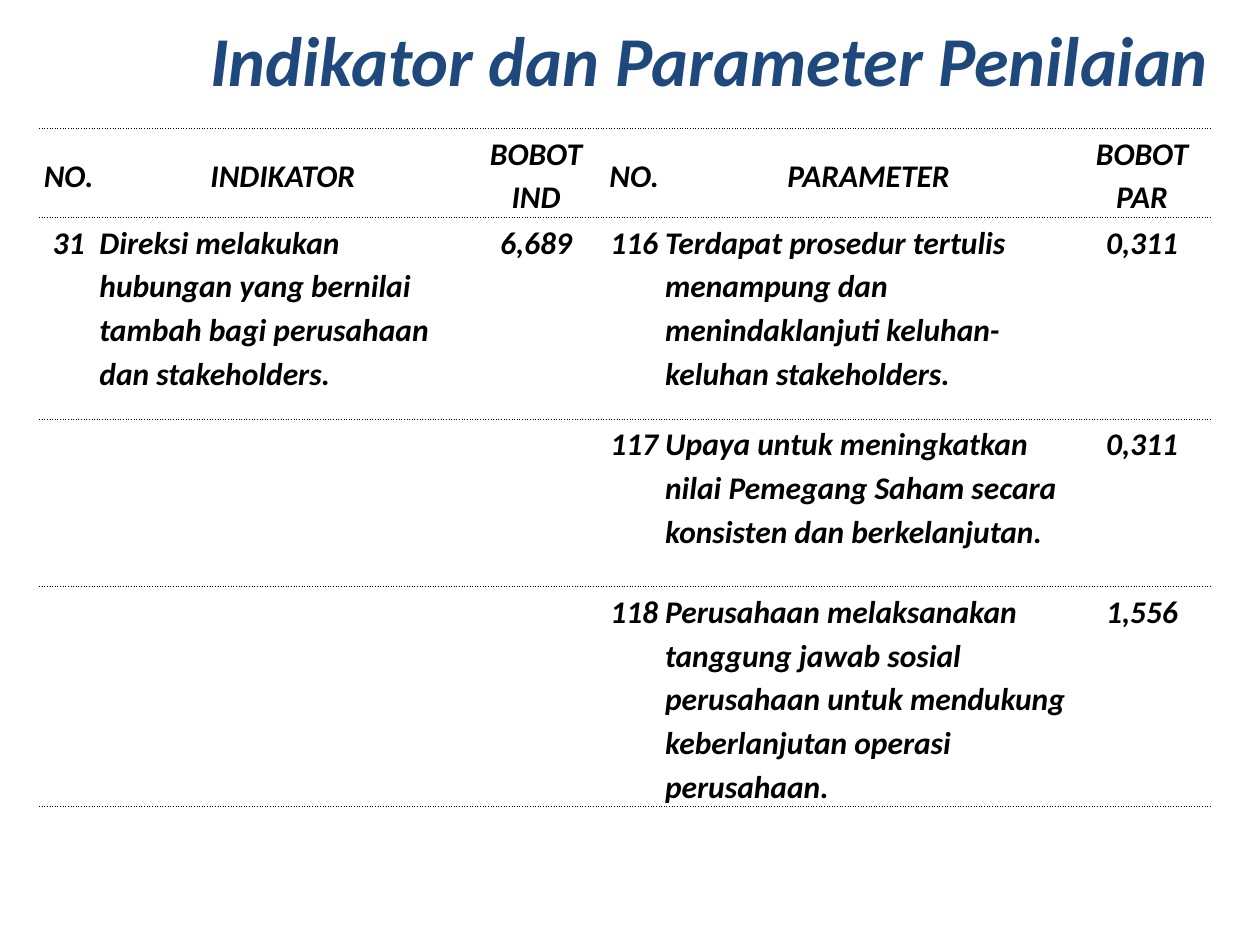
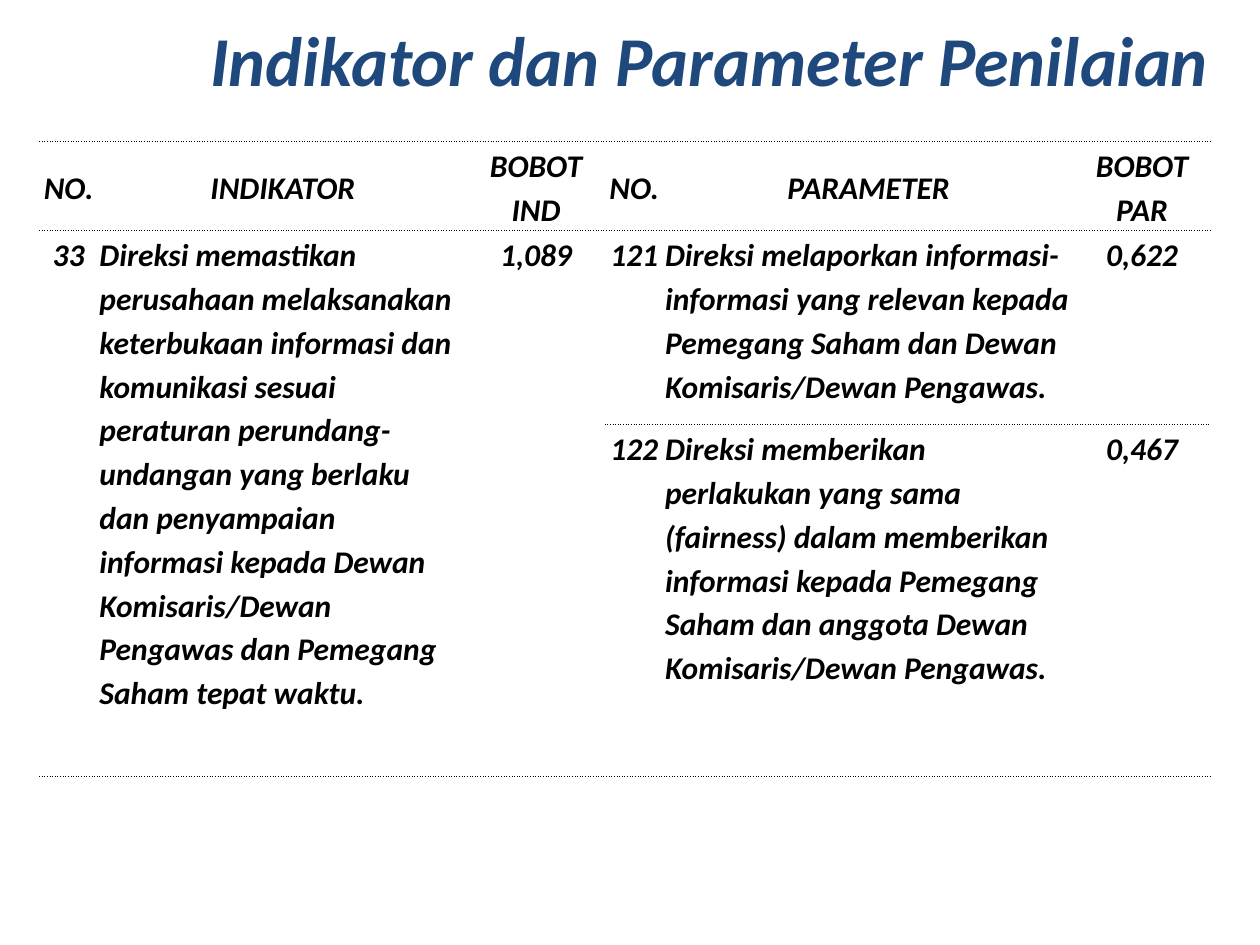
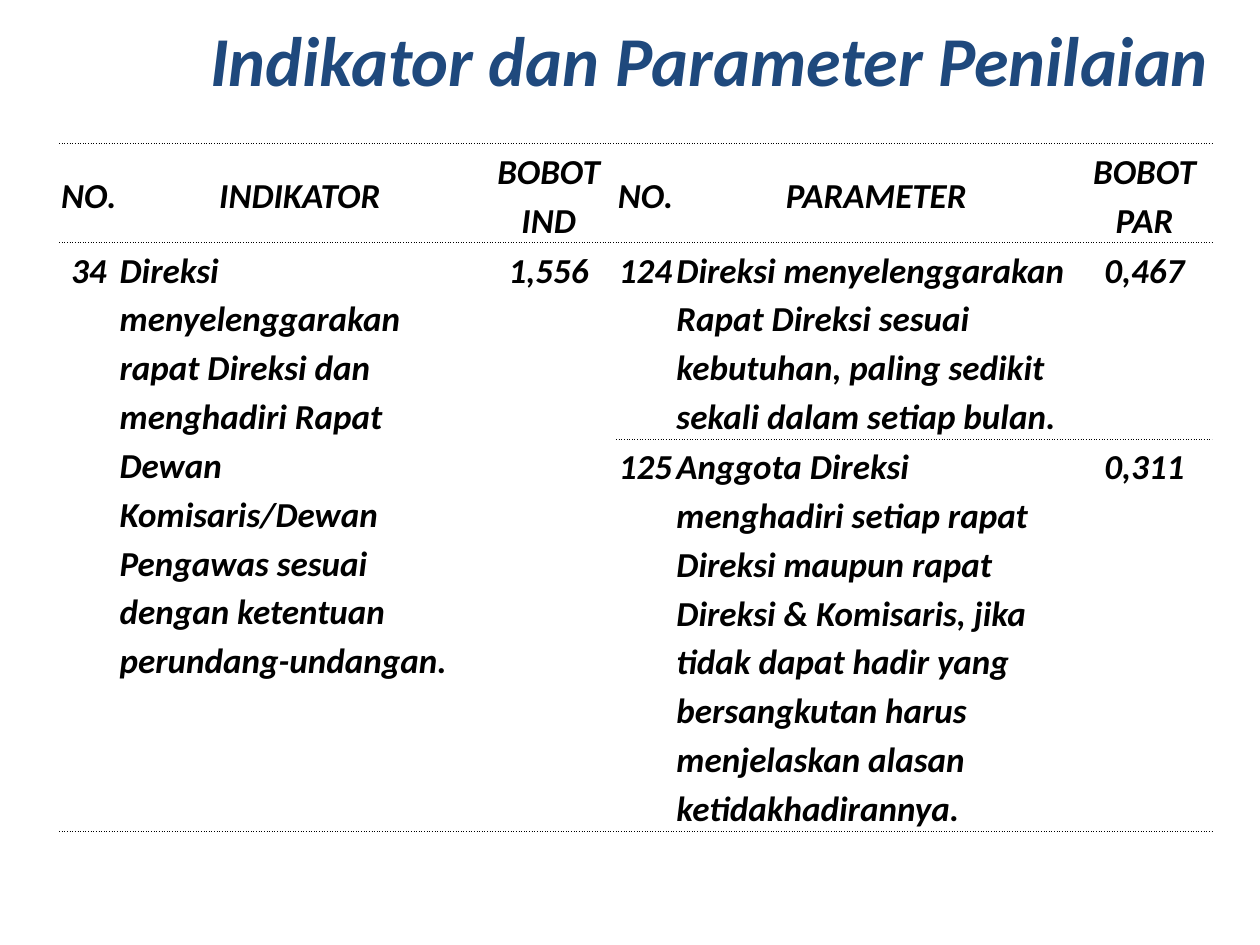
import pptx
import pptx.dml.color
import pptx.enum.text
import pptx.oxml
import pptx.oxml.ns
import pptx.util

Inches = pptx.util.Inches
Align = pptx.enum.text.PP_ALIGN
Anchor = pptx.enum.text.MSO_ANCHOR

THEME = {
    "title": {"name": "Calibri", "size": 40, "color": "1F497D", "bold": True, "italic": True},
    "body": {"name": "Calibri", "size": 18, "color": "000000", "bold": True, "italic": True},
    "rule": "000000",
    "rule_width": 0.5,
    "line_spacing": 1.14,
}

TITLE = "Indikator dan Parameter Penilaian"
TITLE_BOX = {"left": 0.69, "top": 0.08, "width": 9, "height": 0.72}
HEADER = ("NO.", "INDIKATOR", "BOBOT IND", "NO.", "PARAMETER", "BOBOT PAR")
PROSE_COLUMNS = (1, 4)
WIDE_COLUMNS = (0.47, 2.93, 1.09, 0.47, 3.25, 1.09)
NARROW_COLUMNS = (0.47, 2.88, 1.07, 0.47, 3.19, 1.07)
CELL_FORMAT = {
    "margin_left": Inches(0.01),
    "margin_right": Inches(0.01),
    "margin_top": Inches(0.01),
    "margin_bottom": 0,
}

PAGES = [
    {
        "left": 0.31, "top": 1.02, "size": 18, "merge_indicator": False,
        "columns": WIDE_COLUMNS, "rows": (0.69, 1.6, 1.33, 1.72),
        "indicator": (
            "31",
            "Direksi melakukan hubungan yang bernilai tambah bagi perusahaan dan stakeholders.",
            "6,689",
        ),
        "parameters": [
            ("116", "Terdapat prosedur tertulis menampung dan menindaklanjuti "
                    "keluhan-keluhan stakeholders.", "0,311"),
            ("117", "Upaya untuk meningkatkan nilai Pemegang Saham secara konsisten "
                    "dan berkelanjutan.", "0,311"),
            ("118", "Perusahaan melaksanakan tanggung jawab sosial perusahaan untuk "
                    "mendukung keberlanjutan operasi perusahaan.", "1,556"),
        ],
    },
    {
        "left": 0.31, "top": 1.12, "size": 18, "merge_indicator": True,
        "columns": WIDE_COLUMNS, "rows": (0.69, 1.54, 2.8),
        "indicator": (
            "33",
            "Direksi memastikan perusahaan melaksanakan keterbukaan informasi dan "
            "komunikasi sesuai peraturan perundang-undangan yang berlaku dan penyampaian "
            "informasi kepada Dewan Komisaris/Dewan Pengawas dan Pemegang Saham tepat waktu.",
            "1,089",
        ),
        "parameters": [
            ("121", "Direksi melaporkan informasi-informasi yang relevan kepada Pemegang "
                    "Saham dan Dewan Komisaris/Dewan Pengawas.", "0,622"),
            ("122", "Direksi memberikan perlakukan yang sama (fairness) dalam memberikan "
                    "informasi kepada Pemegang Saham dan anggota Dewan Komisaris/Dewan "
                    "Pengawas.", "0,467"),
        ],
    },
    {
        "left": 0.47, "top": 1.14, "size": 20, "merge_indicator": True,
        "columns": NARROW_COLUMNS, "rows": (0.77, 1.53, 3.05),
        "indicator": (
            "34",
            "Direksi menyelenggarakan rapat Direksi dan menghadiri Rapat Dewan "
            "Komisaris/Dewan Pengawas sesuai dengan ketentuan perundang-undangan.",
            "1,556",
        ),
        "parameters": [
            ("124", "Direksi menyelenggarakan Rapat Direksi sesuai kebutuhan, paling "
                    "sedikit sekali dalam setiap bulan.", "0,467"),
            ("125", "Anggota Direksi menghadiri setiap rapat Direksi maupun rapat Direksi "
                    "& Komisaris, jika tidak dapat hadir yang bersangkutan harus "
                    "menjelaskan alasan ketidakhadirannya.", "0,311"),
        ],
    },
]


def set_all(target, values):
    for name, value in values.items():
        setattr(target, name, value)


def style_font(font, style):
    values = {**style, "size": pptx.util.Pt(style["size"])}
    color = values.pop("color")
    set_all(font, values)
    font.color.rgb = pptx.dml.color.RGBColor.from_string(color)


def add_title(page):
    title = page.shapes.title
    set_all(title, {name: Inches(value) for name, value in TITLE_BOX.items()})
    frame = title.text_frame
    frame.text = TITLE
    set_all(frame, {
        "word_wrap": True,
        "auto_size": pptx.enum.text.MSO_AUTO_SIZE.NONE,
        "vertical_anchor": Anchor.TOP,
    })
    para = frame.paragraphs[0]
    para.alignment = Align.RIGHT
    style_font(para.runs[0].font, THEME["title"])


def draw_borders(cell):
    namespace = pptx.oxml.ns.nsdecls("a")
    width = pptx.util.Pt(THEME["rule_width"])
    dotted = (f'<a:solidFill><a:srgbClr val="{THEME["rule"]}"/></a:solidFill>'
              '<a:prstDash val="sysDot"/>')
    empty = "<a:noFill/>"
    top = empty if cell.is_spanned else dotted
    edges = {"lnL": empty, "lnR": empty, "lnT": top, "lnB": dotted}
    properties = cell._tc.get_or_add_tcPr()
    for position, (edge, content) in enumerate(edges.items()):
        line = f'<a:{edge} {namespace} w="{width}">{content}</a:{edge}>'
        properties.insert(position, pptx.oxml.parse_xml(line))


def fill_cell(cell, text, is_header, is_prose, size):
    set_all(cell, CELL_FORMAT)
    cell.vertical_anchor = Anchor.MIDDLE if is_header else Anchor.TOP
    cell.fill.background()
    draw_borders(cell)
    para = cell.text_frame.paragraphs[0]
    style = {**THEME["body"], "size": size}
    if text:
        span = para.add_run()
        span.text = text
        style_font(span.font, style)
    else:
        style_font(para.font, style)
    para.alignment = Align.LEFT if is_prose and not is_header else Align.CENTER
    para.line_spacing = THEME["line_spacing"]


def add_score_table(page, content):
    columns, rows = content["columns"], content["rows"]
    frame = page.shapes.add_table(
        len(rows), len(columns), Inches(content["left"]), Inches(content["top"]),
        Inches(sum(columns)), Inches(sum(rows)))
    table = frame.table
    set_all(table, {"first_row": False, "horz_banding": False})
    for column, width in zip(table.columns, columns):
        column.width = Inches(width)
    for row, height in zip(table.rows, rows):
        row.height = Inches(height)
    if content["merge_indicator"]:
        for index in range(len(content["indicator"])):
            table.cell(1, index).merge(table.cell(len(rows) - 1, index))

    lines = [HEADER]
    for index, parameter in enumerate(content["parameters"]):
        indicator = content["indicator"] if index == 0 else ("", "", "")
        lines.append(indicator + parameter)
    for row_index, line in enumerate(lines):
        for column_index, text in enumerate(line):
            fill_cell(table.cell(row_index, column_index), text, row_index == 0,
                      column_index in PROSE_COLUMNS, content["size"])


def main():
    deck = pptx.Presentation()
    set_all(deck, {"slide_width": Inches(10), "slide_height": Inches(7.5)})
    layout = deck.slide_layouts.get_by_name("Title Only")
    for content in PAGES:
        page = deck.slides.add_slide(layout)
        add_title(page)
        add_score_table(page, content)
    deck.save("out.pptx")


if __name__ == "__main__":
    main()
